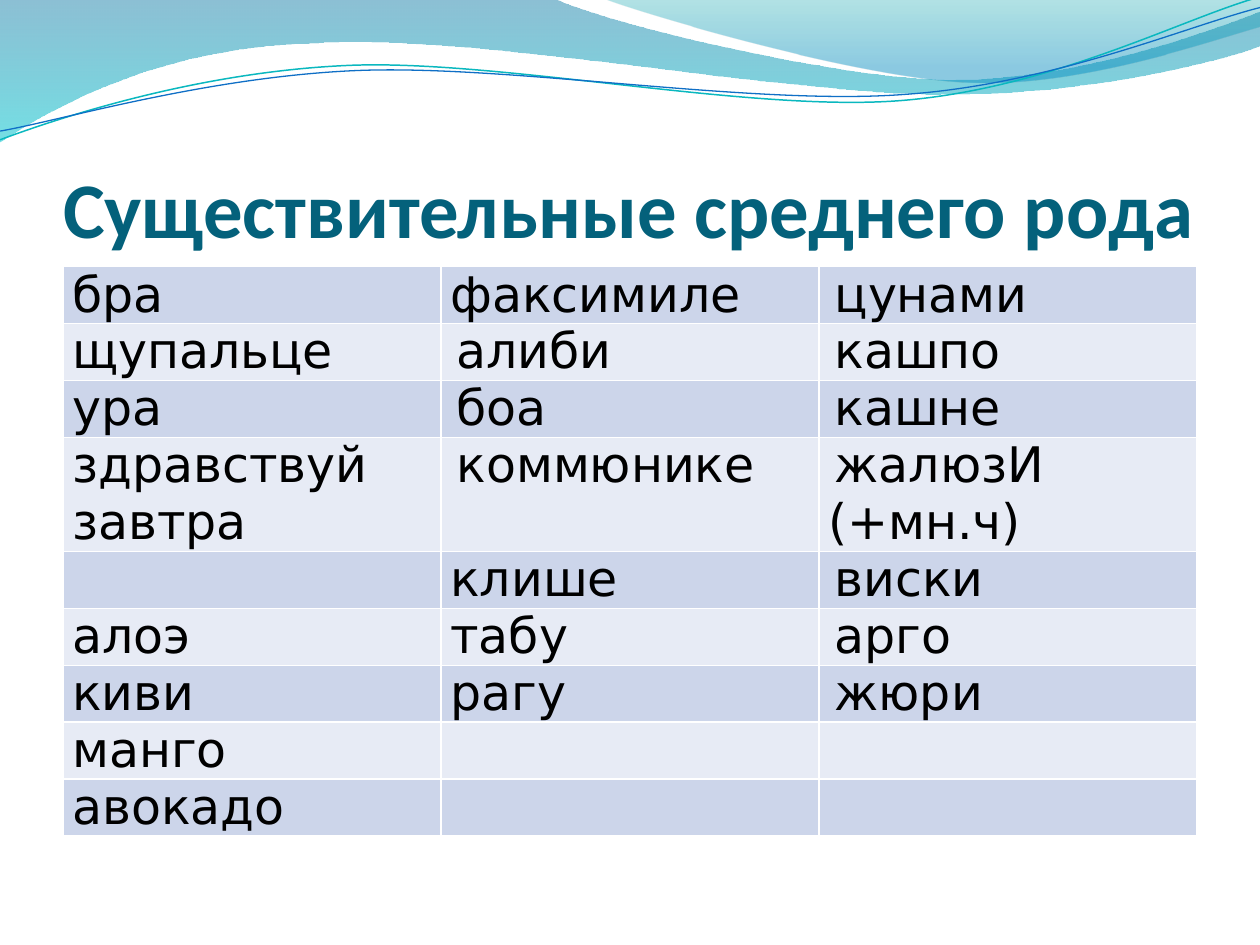
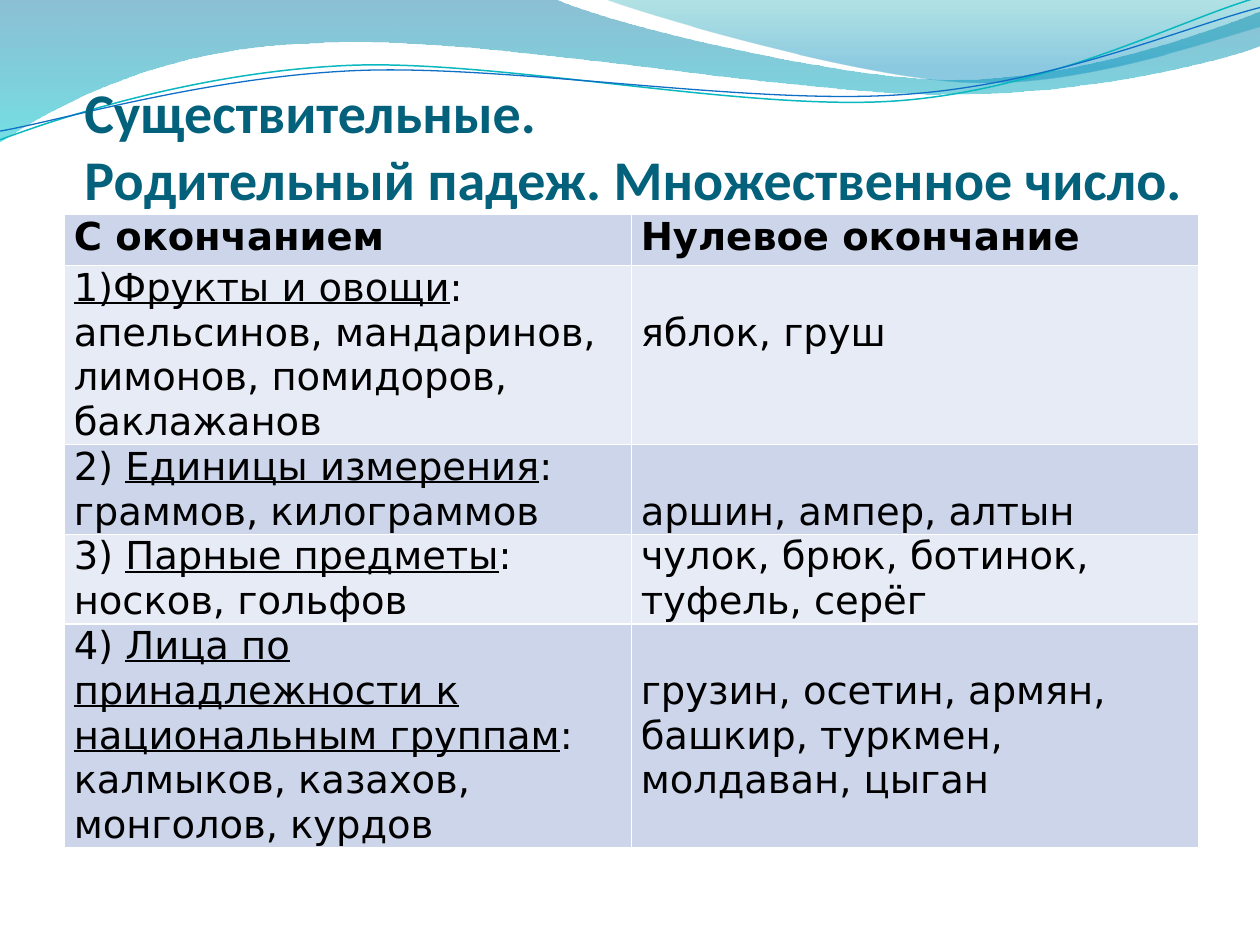
from lxml import etree
from pptx import Presentation
from pptx.dml.color import RGBColor
from pptx.enum import text
from pptx.oxml import ns
from pptx.util import Pt

TITLE_TEAL = RGBColor(0x04, 0x61, 0x7B)
BLACK = RGBColor(0, 0, 0)
WHITE = RGBColor(0xFF, 0xFF, 0xFF)
ROW_FILLS = RGBColor(0xCC, 0xD5, 0xEA), RGBColor(0xE7, 0xEB, 0xF5)
DEEP_BLUE = RGBColor(0x00, 0x74, 0xA1)
AQUA = RGBColor(0x00, 0xC6, 0xCF)
SEA_GREEN = RGBColor(0x00, 0xA1, 0xA9)
SKY_BLUE = RGBColor(0x00, 0x8B, 0xBF)
TEAL_LINE = RGBColor(0x0A, 0xB8, 0xBF)
BLUE_LINE = RGBColor(0x0F, 0x6F, 0xC6)

TITLE_FONT, TABLE_FONT = "Calibri", "DejaVu Sans"
TABLE_WIDTH, ROW_HEIGHT = 648, 29.2

# Outlines in points: a pair is a straight step, six numbers are a curve.
# Gradient stops are (position, colour, opacity in percent).
WAVE_BANDS = [
    ([(0, 0), (316.8, -0.7),
      (342.7, 12.2, 478, 45.4, 545.8, 45.4), (614.2, 45.4, 689.8, 18.7, 720, 6.5),
      (720.7, 25.9),
      (707.8, 31.7, 626.4, 54.7, 537.1, 54), (447.8, 54, 275, 20.2, 185, 24.5),
      (92.9, 25.9, 33.1, 59.8, -0.7, 81.4)],
     [(0, DEEP_BLUE, 45), (1, AQUA, 55)]),
    ([(344.9, -0.7),
      (366.5, 7.9, 491, 44.6, 553.7, 46.8), (616.3, 49.7, 691.9, 23, 720, 15.1),
      (720, 0)],
     [(0, SEA_GREEN, 30), (0.8, SKY_BLUE, 45)]),
]
WAVE_LINES = [
    ([(0, 79.9), (34.6, 67, 113.8, 41, 199.4, 37.4),
      (284.4, 33.8, 427, 64.1, 513.4, 57.6), (599.8, 51.1, 675.4, 10.8, 718.6, -1.4)],
     TEAL_LINE, 0.85),
    ([(0, 74.9), (33.8, 69.1, 118.1, 43.9, 203.8, 40.3),
      (290.2, 36.7, 429.8, 60.5, 516.2, 54), (601.9, 48.2, 677.5, 15.1, 720, 4.3)],
     BLUE_LINE, 0.75),
]

NEUTER_NOUNS = [
    ("бра", "факсимиле", "цунами"),
    ("щупальце", "алиби", "кашпо"),
    ("ура", "боа", "кашне"),
    ("здравствуй\nзавтра", "коммюнике", "жалюзИ (+мн.ч)"),
    ("", "клише", "виски"),
    ("алоэ", "табу", "арго"),
    ("киви", "рагу", "жюри"),
    ("манго", "", ""),
    ("авокадо", "", ""),
]
INDENTED_MIDDLE = ("алиби", "боа", "коммюнике")

ENDING_HEADS = "С окончанием", "Нулевое окончание"
# Number, underlined group, words with an ending, words without, lines skipped
ENDING_GROUPS = [
    ("", "1)Фрукты и овощи", ": апельсинов, мандаринов, лимонов, помидоров, баклажанов",
     "яблок, груш", 1),
    ("2) ", "Единицы измерения", ": граммов, килограммов", "аршин, ампер, алтын", 1),
    ("3) ", "Парные предметы", ": носков, гольфов",
     "чулок, брюк, ботинок, туфель, серёг", 0),
    ("4) ", "Лица по принадлежности к национальным группам",
     ": калмыков, казахов, монголов, курдов",
     "грузин, осетин, армян, башкир, туркмен, молдаван, цыган", 1),
]
ENDING_LINE = 25.6


def set_all(obj, **values):
    for name, value in values.items():
        setattr(obj, name, value)


def add_run(p, words, size, color=BLACK, font=TABLE_FONT, **values):
    r = p.add_run()
    r.text = words
    set_all(r.font, size=Pt(size), name=font, **values)
    r.font.color.rgb = color


def add_outline(s, outline, close):
    """Build a freeform through the end points, then bend its curved steps."""
    start, *steps = outline
    builder = s.shapes.build_freeform(*map(Pt, start))
    builder.add_line_segments([(Pt(step[-2]), Pt(step[-1])) for step in steps], close)
    sp = builder.convert_to_shape()
    sp.shadow.inherit = False
    segments = list(sp.element.iter(ns.qn("a:lnTo")))
    for segment, step in zip(segments, steps):
        if len(step) == 6:
            segment.tag = ns.qn("a:cubicBezTo")
            for i in (0, 2):
                pt = etree.Element(ns.qn("a:pt"), x=str(Pt(step[i]) - sp.left),
                                   y=str(Pt(step[i + 1]) - sp.top))
                segment.insert(i // 2, pt)
    return sp


def add_band(s, outline, stops):
    sp = add_outline(s, outline, True)
    sp.line.fill.background()
    sp.fill.gradient()
    sp.fill.gradient_angle = 270
    for stop, (position, color, _) in zip(sp.fill.gradient_stops, stops):
        stop.position = position
        stop.color.rgb = color
    for clr, (_, _, opacity) in zip(sp.element.iter(ns.qn("a:srgbClr")), stops):
        etree.SubElement(clr, ns.qn("a:alpha"), val=str(opacity * 1000))
    return sp


def add_wave_line(s, outline, color, width):
    sp = add_outline(s, outline, False)
    sp.fill.background()
    sp.line.color.rgb = color
    sp.line.width = Pt(width)
    return sp


def add_waves(layout, s):
    """Draw the waves on a slide, then move them behind the layout's content."""
    waves = [add_band(s, *band) for band in WAVE_BANDS]
    waves += [add_wave_line(s, *line) for line in WAVE_LINES]
    for i, sp in enumerate(waves):
        layout.shapes.element.insert(2 + i, sp.element)


def add_title(s, lines, size, left, top, height):
    sp = s.shapes.title
    set_all(sp, left=Pt(left), top=Pt(top), width=Pt(TABLE_WIDTH), height=Pt(height))
    tf = sp.text_frame
    set_all(tf, margin_left=0, margin_top=Pt(3.6), margin_right=0, margin_bottom=0,
            word_wrap=True, auto_size=text.MSO_AUTO_SIZE.NONE,
            vertical_anchor=text.MSO_ANCHOR.BOTTOM)
    p = tf.paragraphs[0]
    p.alignment = text.PP_ALIGN.LEFT
    for i, line in enumerate(lines):
        if i:
            p.add_line_break()
        add_run(p, line, size, TITLE_TEAL, TITLE_FONT, bold=True)


def add_borders(cell):
    tc_pr = cell._tc.get_or_add_tcPr()
    for i, side in enumerate(("lnL", "lnR", "lnT", "lnB")):
        ln = etree.Element(ns.qn("a:" + side), w=str(Pt(1)))
        fill = etree.SubElement(ln, ns.qn("a:solidFill"))
        etree.SubElement(fill, ns.qn("a:srgbClr"), val=str(WHITE))
        tc_pr.insert(i, ln)


def add_word_table(s, rows, cols, left, top):
    frame = s.shapes.add_table(rows, cols, Pt(left), Pt(top), Pt(TABLE_WIDTH),
                               Pt(ROW_HEIGHT * rows))
    table = frame.table
    set_all(table, first_row=False, horz_banding=False)
    for i, row in enumerate(table.rows):
        for cell in row.cells:
            set_all(cell, margin_left=Pt(5.4), margin_right=Pt(5.4),
                    margin_top=0, margin_bottom=0)
            cell.fill.solid()
            cell.fill.fore_color.rgb = ROW_FILLS[i % 2]
            add_borders(cell)
    return table


def fill_noun(cell, words, indented):
    tf = cell.text_frame
    for i, line in enumerate(words.split("\n")):
        p = tf.add_paragraph() if i else tf.paragraphs[0]
        p.alignment = text.PP_ALIGN.JUSTIFY
        if indented:
            set_indent = p._p.get_or_add_pPr().set
            set_indent("marL", "0")
            set_indent("indent", str(Pt(3.6)))
        add_run(p, line, 28)


def neuter_nouns(s):
    add_title(s, ["Существительные среднего рода"], 45, 36, 55.4, 90)
    table = add_word_table(s, len(NEUTER_NOUNS), 3, 36, 152.4)
    for i, nouns in enumerate(NEUTER_NOUNS):
        for j, noun in enumerate(nouns):
            if noun:
                fill_noun(table.cell(i, j), noun, j == 2 or noun in INDENTED_MIDDLE)


def genitive_plural(s):
    add_title(s, ["Существительные.", "Родительный падеж. Множественное число."],
              32, 48.2, 43.2, 77.8)
    table = add_word_table(s, len(ENDING_GROUPS) + 1, 2, 36.8, 122.6)
    for j, head in enumerate(ENDING_HEADS):
        add_run(table.cell(0, j).text_frame.paragraphs[0], head, 22, bold=True)
    for i, (number, group, ended, bare, skipped) in enumerate(ENDING_GROUPS, 1):
        p = table.cell(i, 0).text_frame.paragraphs[0]
        if number:
            add_run(p, number, 22)
        add_run(p, group, 22, underline=True)
        add_run(p, ended, 22)
        cell = table.cell(i, 1)
        cell.margin_top = Pt(ENDING_LINE * skipped)
        add_run(cell.text_frame.paragraphs[0], bare, 22)


def main():
    prs = Presentation()
    set_all(prs, slide_width=Pt(720), slide_height=Pt(540))
    layout = prs.slide_layouts[5]
    nouns, genitive = (prs.slides.add_slide(layout) for _ in range(2))
    add_waves(layout, nouns)
    neuter_nouns(nouns)
    genitive_plural(genitive)
    prs.save("out.pptx")


if __name__ == "__main__":
    main()
